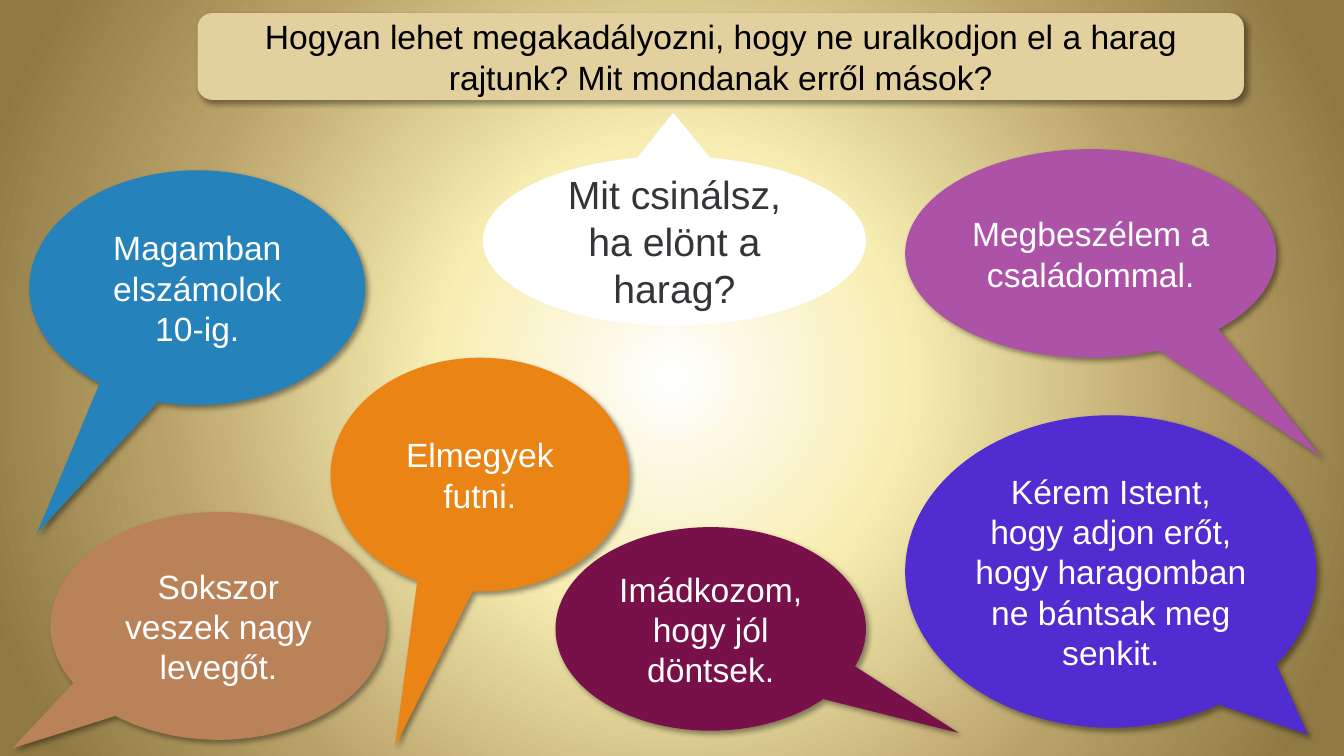
from pptx import Presentation
from pptx.dml.color import RGBColor as Rgb
from pptx.enum.shapes import MSO_SHAPE as Kind
from pptx.enum.text import MSO_ANCHOR as Anchor, MSO_AUTO_SIZE as Fit, PP_ALIGN as Align
from pptx.oxml import parse_xml
from pptx.oxml.ns import nsdecls
from pptx.util import Inches, Pt

STOPS = [(0, "FFFFFF"), (30, "F8EEB3"), (67, "B8A168"), (94, "8F7943")]
ASK = ("Mit csinálsz, ha elönt a harag?", (35.93, 20.67, 28.5, 22.4), (-0.003, -0.757), "FFFFFF")
REPLIES = [
    ("Magamban elszámolok 10-ig.", (2.18, 22.53, 25, 31.07), (-0.477, 1.045), "2582BB"),
    ("Sokszor veszek nagy levegőt.", (3.75, 67.73, 25, 30.13), (-0.613, 0.537), "B98258"),
    ("Kérem Istent, hogy adjon erőt, hogy haragomban ne bántsak meg senkit.",
     (67.35, 54.93, 30.6, 41.33), (0.479, 0.522), "502CD1"),
    ("Imádkozom, hogy jól döntsek.", (41.33, 69.73, 23.1, 26.93), (0.799, 0.511), "781049"),
    ("Megbeszélem a családommal.", (67.35, 19.73, 27.6, 27.6), (0.62, 0.973), "AC53A8"),
    ("Elmegyek futni.", (24.6, 47.33, 22.2, 30.93), (-0.284, 1.162), "E98415"),
]


def tint(code):
    return Rgb.from_string(code)


class Deck:
    """Holds the style and the current slide; boxes are percent shares of the slide."""

    font = "Arial"

    def __init__(self):
        self.prs = Presentation()
        self.prs.slide_width, self.prs.slide_height = Inches(13.33), Inches(7.5)
        self.slide = self.prs.slides.add_slide(self.prs.slide_layouts[5])

    def area(self, box):
        wide, high = self.prs.slide_width, self.prs.slide_height
        return [int(part * side / 100) for part, side in zip(box, (wide, high, wide, high))]

    def glow(self, stops):
        marks = "".join(f'<a:gs pos="{pos * 1000}"><a:srgbClr val="{code}"/></a:gs>'
                        for pos, code in stops)
        back = parse_xml(
            f'<p:bg {nsdecls("p", "a")}><p:bgPr><a:gradFill rotWithShape="1">'
            f'<a:gsLst>{marks}</a:gsLst><a:path path="circle">'
            '<a:fillToRect l="50000" t="50000" r="50000" b="50000"/></a:path>'
            '</a:gradFill><a:effectLst/></p:bgPr></p:bg>')
        self.slide.element.cSld.insert(0, back)

    def shade(self, shape):
        shape.element.spPr.append(parse_xml(
            f'<a:effectLst {nsdecls("a")}><a:outerShdw blurRad="{Pt(4)}" dist="{Pt(3)}" '
            'dir="2700000" algn="tl" rotWithShape="0"><a:srgbClr val="000000">'
            '<a:alpha val="40000"/></a:srgbClr></a:outerShdw></a:effectLst>'))

    def label(self, shape, text, size, code):
        frame = shape.text_frame
        frame.word_wrap, frame.auto_size = True, Fit.NONE
        frame.vertical_anchor = Anchor.MIDDLE
        para = frame.paragraphs[0]
        para.alignment = Align.CENTER
        run = para.add_run()
        run.text = text
        run.font.name, run.font.size = self.font, Pt(size)
        run.font.color.rgb = tint(code)

    def form(self, kind, box, fill, shadow=True):
        shape = self.slide.shapes.add_shape(kind, *self.area(box))
        shape.fill.solid()
        shape.fill.fore_color.rgb = tint(fill)
        shape.line.fill.background()
        if shadow:
            self.shade(shape)
        else:
            shape.shadow.inherit = False
        return shape

    def title(self, text, box, fill):
        card = self.form(Kind.ROUNDED_RECTANGLE, box, fill)
        head = self.slide.shapes.title
        head.left, head.top, head.width, head.height = self.area(box)
        head.text_frame.margin_left = head.text_frame.margin_right = Inches(0.15)
        self.label(head, text, 24, "000000")
        card.element.addnext(head.element)

    def bubble(self, text, box, tip, fill, size=24, code="FFFFFF", shadow=True):
        shape = self.form(Kind.OVAL_CALLOUT, box, fill, shadow)
        shape.adjustments[0], shape.adjustments[1] = tip
        self.label(shape, text, size, code)


def main():
    deck = Deck()
    deck.glow(STOPS)
    deck.bubble(*ASK, size=28, code="343539", shadow=False)
    deck.title("Hogyan lehet megakadályozni, hogy ne uralkodjon el a harag rajtunk? "
               "Mit mondanak erről mások?", (14.7, 1.73, 77.85, 11.47), "E2D19F")
    for reply in REPLIES:
        deck.bubble(*reply)
    deck.prs.save("out.pptx")


if __name__ == "__main__":
    main()
